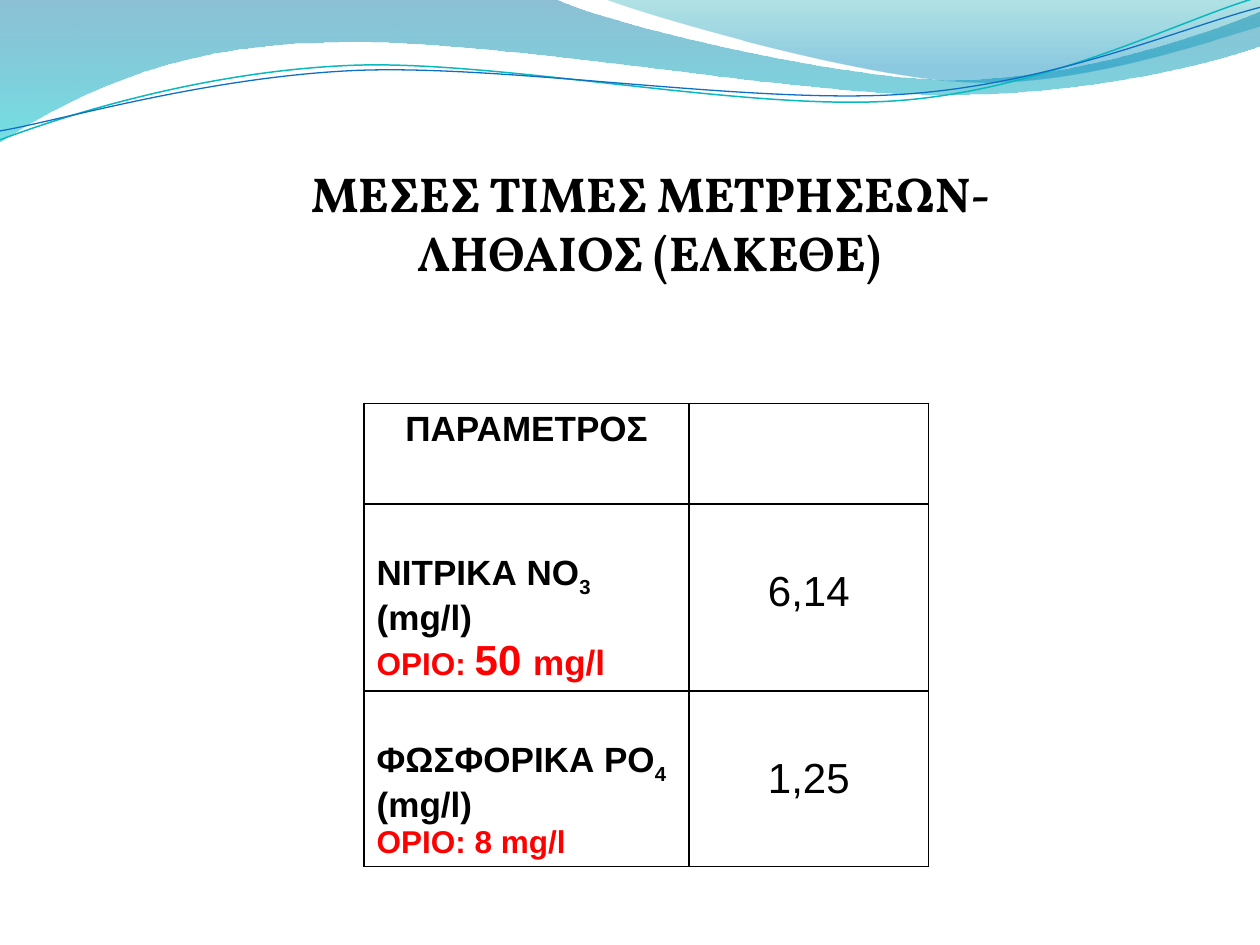
"""Build the slide with mean nitrate and phosphate measurements under a wave banner."""
from itertools import product

from lxml import etree
from pptx import Presentation
from pptx.dml.color import RGBColor
from pptx.enum.text import PP_ALIGN
from pptx.oxml.ns import qn
from pptx.util import Cm, Pt

CENTER, LEFT = PP_ALIGN.CENTER, PP_ALIGN.LEFT

THEME = {
    "title_font": "Vollkorn", "body_font": "Arial",
    "title": 28, "label": 20, "limit": 18, "value": 24,
    "text": "000000", "alert": "FF0000", "border": "000000",
}

TITLE = "ΜΕΣΕΣ ΤΙΜΕΣ ΜΕΤΡΗΣΕΩΝ-ΛΗΘΑΙΟΣ (ΕΛΚΕΘΕ)"
TITLE_BOX = (5.36, 3.18, 15.47, 2.64)

LABEL = ("label", "text", True, 0)
SUBSCRIPT = ("label", "text", True, -25000)
LIMIT = ("limit", "alert", True, 0)
LIMIT_NUMBER = ("value", "alert", True, 0)
LIMIT_UNIT = ("label", "alert", True, 0)
VALUE = ("value", "text", False, 0)

TABLE_ORIGIN = (7.34, 8.13)
COLUMN_WIDTHS = (6.55, 4.83)
ROW_HEIGHTS = (2.03, 3.77, 3.53)
HEADER_MARGIN, LABEL_MARGIN, VALUE_MARGIN = 0.13, 1.01, 1.3
ROWS = [
    [(CENTER, HEADER_MARGIN, [[("ΠΑΡΑΜΕΤΡΟΣ", LABEL)]]),
     (CENTER, HEADER_MARGIN, [])],
    [(LEFT, LABEL_MARGIN, [
        [("ΝΙΤΡΙΚΑ ΝΟ", LABEL), ("3 ", SUBSCRIPT), ("(mg/l)", LABEL)],
        [("ΟΡΙΟ: ", LIMIT), ("50 ", LIMIT_NUMBER), ("mg/l", LIMIT_UNIT)]]),
     (CENTER, VALUE_MARGIN, [[("6,14", VALUE)]])],
    [(LEFT, LABEL_MARGIN, [
        [("ΦΩΣΦΟΡΙΚΑ PO", LABEL), ("4", SUBSCRIPT)],
        [("(mg/l)", LABEL)],
        [("ΟΡΙΟ: 8 mg/l", LIMIT)]]),
     (CENTER, VALUE_MARGIN, [[("1,25", VALUE)]])],
]

WAVE_BANDS = [
    {"start": (0, -0.03),
     "segments": [(11.18, -0.03), (12.09, 0.43, 16.87, 1.6, 19.25, 1.6),
                  (21.67, 1.6, 24.33, 0.66, 25.4, 0.23), (25.43, 0.91),
                  (24.97, 1.12, 22.1, 1.93, 18.95, 1.91),
                  (15.8, 1.91, 9.7, 0.71, 6.53, 0.86),
                  (3.28, 0.89, 1.17, 2.11, -0.03, 2.87)],
     "stops": [(0, "0074A1", 45), (1, "00C6CF", 55)]},
    {"start": (12.17, -0.03),
     "segments": [(12.93, 0.28, 17.32, 1.57, 19.53, 1.65),
                  (21.74, 1.75, 24.41, 0.81, 25.4, 0.53), (25.4, 0)],
     "stops": [(0, "00A1A9", 30), (0.8, "008BBF", 45)]},
]
WAVE_LINES = [
    {"start": (0, 2.82),
     "segments": [(1.22, 2.36, 4.01, 1.45, 7.04, 1.32),
                  (10.03, 1.19, 15.06, 2.26, 18.11, 2.03),
                  (21.16, 1.8, 23.83, 0.38, 25.35, -0.05)],
     "color": "0AB8BF", "width": 0.85},
    {"start": (0, 2.64),
     "segments": [(1.19, 2.44, 4.17, 1.55, 7.19, 1.42),
                  (10.24, 1.3, 15.16, 2.11, 18.21, 1.9),
                  (21.23, 1.7, 23.9, 0.53, 25.4, 0.15)],
     "color": "0F6FC6", "width": 0.75},
]


def bend_segments(shape, segments):
    edges = list(shape._element.spPr.iter(qn("a:lnTo")))
    for edge, segment in zip(edges, segments):
        if len(segment) == 2:
            continue
        curve = etree.Element(qn("a:cubicBezTo"))
        for x, y in zip(segment[::2], segment[1::2]):
            etree.SubElement(curve, qn("a:pt"),
                             x=str(Cm(x) - shape.left), y=str(Cm(y) - shape.top))
        edge.getparent().replace(edge, curve)


def add_wave(slide, wave, closed):
    start, segments = wave["start"], wave["segments"]
    builder = slide.shapes.build_freeform(*map(Cm, start))
    anchors = [tuple(map(Cm, segment[-2:])) for segment in segments]
    builder.add_line_segments(anchors, close=closed)
    shape = builder.convert_to_shape()
    bend_segments(shape, segments)
    shape.shadow.inherit = False
    return shape


def add_band(slide, wave):
    shape = add_wave(slide, wave, True)
    shape.line.fill.background()
    shape.fill.gradient()
    shape.fill.gradient_angle = 270
    for stop, (position, color, _) in zip(shape.fill.gradient_stops, wave["stops"]):
        stop.position = position
        stop.color.rgb = RGBColor.from_string(color)
    colors = shape._element.spPr.iter(qn("a:srgbClr"))
    for element, (_, _, opacity) in zip(list(colors), wave["stops"]):
        etree.SubElement(element, qn("a:alpha"), val=str(opacity * 1000))


def add_wave_line(slide, wave):
    shape = add_wave(slide, wave, False)
    shape.fill.background()
    shape.line.color.rgb = RGBColor.from_string(wave["color"])
    shape.line.width = Pt(wave["width"])


def add_run(paragraph, text, style, font_name):
    size, color, bold, baseline = style
    run = paragraph.add_run()
    run.text = text
    run.font.name = font_name
    run.font.size = Pt(THEME[size])
    run.font.bold = bold
    run.font.color.rgb = RGBColor.from_string(THEME[color])
    if baseline:
        run._r.get_or_add_rPr().set("baseline", str(baseline))


def add_borders(cell):
    properties = cell._tc.get_or_add_tcPr()
    for side in ("lnL", "lnR", "lnT", "lnB"):
        line = etree.SubElement(properties, qn(f"a:{side}"), w=str(Pt(1)))
        fill = etree.SubElement(line, qn("a:solidFill"))
        etree.SubElement(fill, qn("a:srgbClr"), val=THEME["border"])


def fill_cell(cell, alignment, top_margin, paragraphs):
    add_borders(cell)
    cell.fill.background()
    cell.margin_top = Cm(top_margin)
    for index, runs in enumerate(paragraphs):
        frame = cell.text_frame
        paragraph = frame.add_paragraph() if index else frame.paragraphs[0]
        paragraph.alignment = alignment
        for text, style in runs:
            add_run(paragraph, text, style, THEME["body_font"])


def add_measurements(slide):
    size = (sum(COLUMN_WIDTHS), sum(ROW_HEIGHTS))
    table = slide.shapes.add_table(
        len(ROW_HEIGHTS), len(COLUMN_WIDTHS), *map(Cm, TABLE_ORIGIN + size)).table
    table.first_row = table.horz_banding = False
    for column, width in zip(table.columns, COLUMN_WIDTHS):
        column.width = Cm(width)
    for row, height in zip(table.rows, ROW_HEIGHTS):
        row.height = Cm(height)
    for row, column in product(range(len(ROW_HEIGHTS)), range(len(COLUMN_WIDTHS))):
        fill_cell(table.cell(row, column), *ROWS[row][column])


def add_title(slide):
    frame = slide.shapes.add_textbox(*map(Cm, TITLE_BOX)).text_frame
    frame.word_wrap = True
    paragraph = frame.paragraphs[0]
    paragraph.alignment = CENTER
    add_run(paragraph, TITLE, ("title", "text", True, 0), THEME["title_font"])


def main():
    presentation = Presentation()
    presentation.slide_width, presentation.slide_height = Cm(25.4), Cm(19.05)
    slide = presentation.slides.add_slide(presentation.slide_layouts[6])
    for wave in WAVE_BANDS:
        add_band(slide, wave)
    for wave in WAVE_LINES:
        add_wave_line(slide, wave)
    add_measurements(slide)
    add_title(slide)
    presentation.save("out.pptx")


if __name__ == "__main__":
    main()
